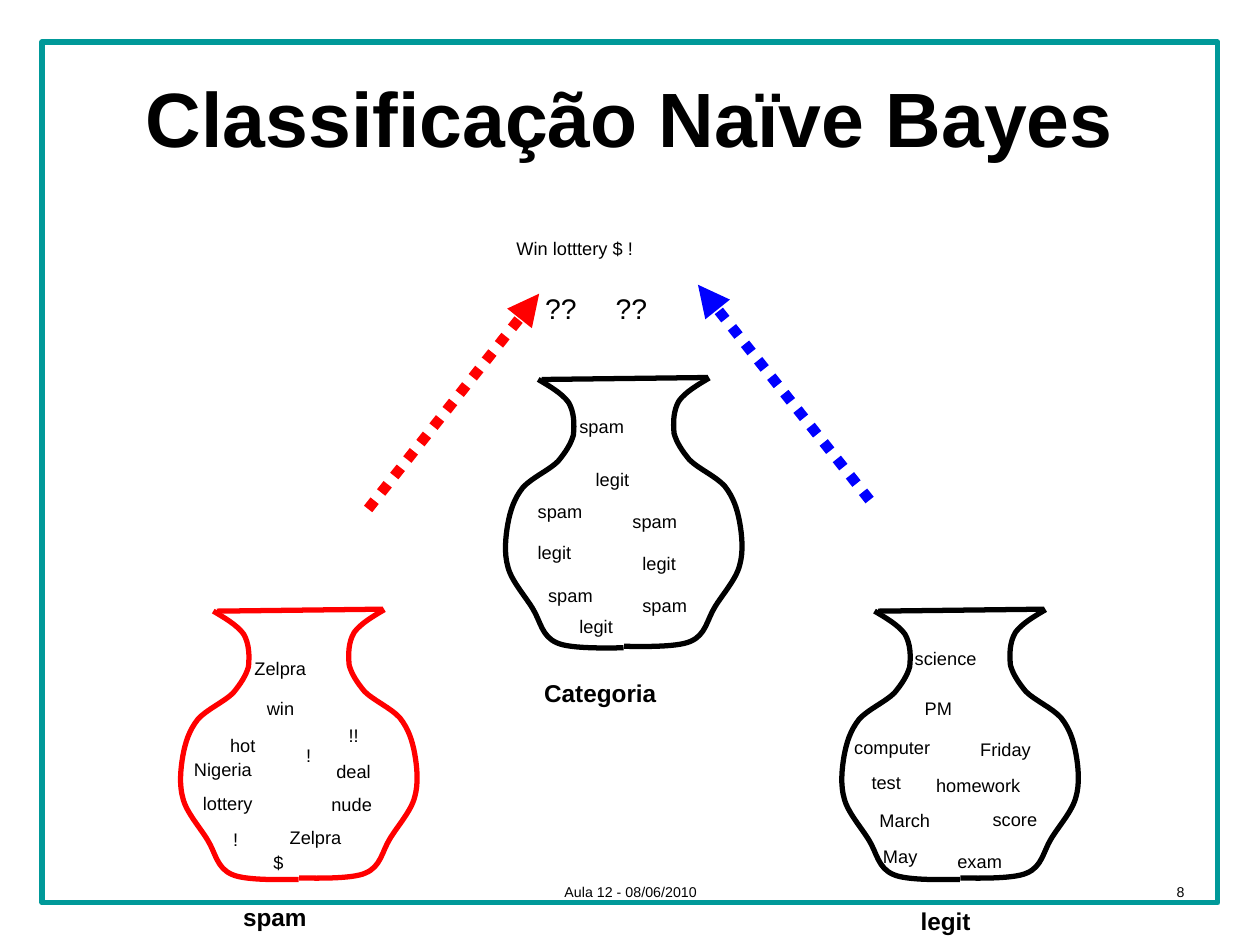
import pptx
import pptx.util
import pptx.dml.color
import pptx.enum.dml
import pptx.enum.shapes
import pptx.enum.text
import pptx.oxml.ns
import lxml.etree

Cm, Pt = pptx.util.Cm, pptx.util.Pt
qn = pptx.oxml.ns.qn
RGBColor = pptx.dml.color.RGBColor
ALIGN = pptx.enum.text.PP_ALIGN
STRAIGHT = pptx.enum.shapes.MSO_CONNECTOR.STRAIGHT

BLACK = RGBColor(0x00, 0x00, 0x00)
RED = RGBColor(0xFF, 0x00, 0x00)
BLUE = RGBColor(0x00, 0x00, 0xFF)
TEAL = RGBColor(0x00, 0x99, 0x99)

deck = pptx.Presentation()
deck.slide_width, deck.slide_height = Cm(25.4), Cm(19.05)
page = deck.slides.add_slide(deck.slide_layouts[6])


def add_text(text, left, top, width, height=1.02, size=18, bold=False,
             lowered=True, align=None):
    """Add a text box; without an alignment it hugs its single line."""
    box = page.shapes.add_textbox(Cm(left), Cm(top), Cm(width), Cm(height))
    frame = box.text_frame
    frame.word_wrap = align is not None
    if align is None:
        frame.auto_size = pptx.enum.text.MSO_AUTO_SIZE.SHAPE_TO_FIT_TEXT
    para = frame.paragraphs[0]
    para.alignment = align
    span = para.add_run()
    span.text = text
    span.font.name = "Arial"
    span.font.size = Pt(size)
    span.font.bold = bold
    span.font.color.rgb = BLACK
    if lowered:
        span.font._element.set("baseline", "-25000")
    return box


def add_line(x1, y1, x2, y2, color, weight):
    line = page.shapes.add_connector(STRAIGHT, Cm(x1), Cm(y1), Cm(x2), Cm(y2))
    line.line.color.rgb = color
    line.line.width = Pt(weight)
    lxml.etree.SubElement(line._element.spPr, qn("a:effectLst"))
    return line


# Frame and title
border = page.shapes.add_shape(pptx.enum.shapes.MSO_SHAPE.RECTANGLE,
                               Cm(0.85), Cm(0.85), Cm(23.7), Cm(17.35))
border.shadow.inherit = False
border.fill.background()
border.line.color.rgb = TEAL
border.line.width = Pt(3)

title = add_text("Classificação Naïve Bayes", 1.27, 0.76, 22.86, 3.18, 44,
                 True, False, ALIGN.CENTER)
title.text_frame.vertical_anchor = pptx.enum.text.MSO_ANCHOR.MIDDLE

# Vases: left profile as a start point and Bezier triples, mirrored for the right
VASE_WIDTH = 4.83
PROFILE = [
    (0.69, 0),
    (0.91, 0.13), (1.17, 0.28), (1.30, 0.46),
    (1.42, 0.66), (1.42, 0.91), (1.40, 1.12),
    (1.35, 1.30), (1.24, 1.47), (1.09, 1.65),
    (0.91, 1.83), (0.56, 1.98), (0.38, 2.18),
    (0.20, 2.41), (0.13, 2.64), (0.08, 2.90),
    (0.03, 3.18), (0, 3.51), (0.08, 3.78),
    (0.15, 4.06), (0.43, 4.37), (0.58, 4.62),
    (0.74, 4.88), (0.76, 5.18), (1.07, 5.31),
    (1.35, 5.44), (2.18, 5.41), (2.41, 5.41),
]
MIRRORED = [(VASE_WIDTH - x, y - 0.03) for x, y in PROFILE]

for left, top, color in [(16.94, 12.32, BLACK), (3.61, 12.32, RED),
                         (10.16, 7.65, BLACK)]:
    for side in (PROFILE, MIRRORED):
        points = [(Cm(left + x), Cm(top + y)) for x, y in side]
        builder = page.shapes.build_freeform(*points[0])
        builder.add_line_segments(points[1:], close=False)
        half = builder.convert_to_shape()
        half.shadow.inherit = False
        half.fill.background()
        half.line.color.rgb = color
        half.line.width = Pt(3)
        # Join each three straight segments into one Bezier curve
        segments = list(half._element.iter(qn("a:lnTo")))
        outline = segments[0].getparent()
        for start in range(0, len(segments), 3):
            curve = lxml.etree.SubElement(outline, qn("a:cubicBezTo"))
            for segment in segments[start:start + 3]:
                curve.append(segment[0])
                outline.remove(segment)
    add_line(left + 0.76, top, left + 4.11, top - 0.04, color, 3)

# Words in the spam vase and the legit vase
for word, left, top, width in [
    ("Zelpra", 4.88, 12.70, 2.24), ("win", 5.13, 13.51, 1.45),
    ("!!", 6.78, 14.05, 0.91), ("hot", 4.39, 14.25, 1.32),
    ("!", 5.92, 14.45, 0.71), ("Nigeria", 3.66, 14.73, 2.41),
    ("deal", 6.53, 14.78, 1.55), ("lottery", 3.84, 15.42, 2.16),
    ("nude", 6.43, 15.44, 1.73), ("Zelpra", 5.59, 16.10, 2.24),
    ("!", 4.45, 16.15, 0.71), ("$", 5.26, 16.61, 0.81),
    ("science", 18.19, 12.50, 2.36), ("PM", 18.39, 13.51, 1.42),
    ("computer", 16.97, 14.30, 2.90), ("Friday", 19.51, 14.33, 2.16),
    ("test", 17.32, 14.99, 1.40), ("homework", 18.62, 15.06, 3.23),
    ("score", 19.76, 15.75, 1.85), ("March", 17.48, 15.77, 2.16),
    ("May", 17.55, 16.48, 1.68), ("exam", 19.05, 16.59, 1.88),
]:
    add_text(word, left, top, width)

# Class labels in the category vase
CLASS_WIDTHS = {"spam": 1.98, "legit": 1.75}
for word, left, top in [
    ("spam", 11.43, 7.82), ("legit", 11.76, 8.89), ("spam", 10.59, 9.53),
    ("spam", 12.70 - 0.20, 9.73), ("legit", 10.59, 10.36),
    ("legit", 12.70, 10.59), ("spam", 10.80, 11.23), ("spam", 12.70, 11.43),
    ("legit", 11.43, 11.86),
]:
    add_text(word, left, top, CLASS_WIDTHS[word], 1.09)

# Vase captions
add_text("spam", 4.65, 17.50, 2.44, 1.27, 24, True)
add_text("legit", 18.31, 17.58, 2.06, 1.27, 24, True)
add_text("Categoria", 10.72, 12.98, 3.12, 0.94, 24, True)

# Message to classify, with the question marks set apart by a tab stop
add_text("Win lotttery $ !", 10.16, 4.24, 4.85, 1.09)
question = add_text("??\t??", 10.74, 5.08, 3.48, 1.45, 28)
tabs = lxml.etree.SubElement(
    question.text_frame.paragraphs[0]._p.get_or_add_pPr(), qn("a:tabLst"))
lxml.etree.SubElement(tabs, qn("a:tab"), pos=str(Cm(1.42)), algn="l")

# Dotted arrows from the two classes to the message
for x1, y1, x2, y2, color in [(7.42, 10.26, 10.87, 5.92, RED),
                              (17.53, 10.08, 14.07, 5.74, BLUE)]:
    arrow = add_line(x1, y1, x2, y2, color, 6)
    # ROUND_DOT is the member that writes sysDot
    arrow.line.dash_style = pptx.enum.dml.MSO_LINE.ROUND_DOT
    lxml.etree.SubElement(arrow.line._get_or_add_ln(), qn("a:tailEnd"),
                          type="triangle")

# Footer
add_text("Aula 12 - 08/06/2010", 8.69, 17.35, 8.05, 1.32, 14,
         align=ALIGN.CENTER)
add_text("8", 18.21, 17.35, 5.92, 1.32, 14, align=ALIGN.RIGHT)

deck.save("out.pptx")
